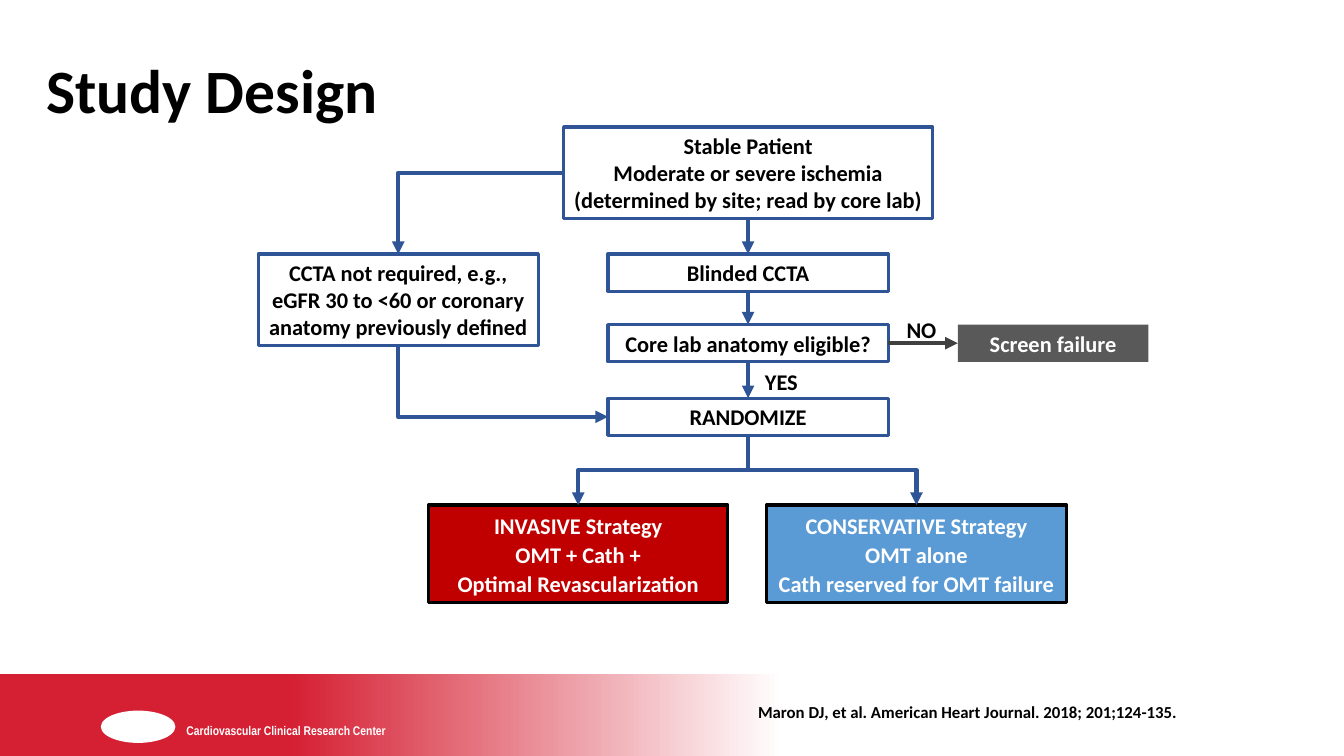
import pptx
import pptx.util
import pptx.dml.color
import pptx.enum.shapes
import pptx.enum.text
import pptx.oxml
import pptx.oxml.ns

Inches = pptx.util.Inches
Pt = pptx.util.Pt
RGBColor = pptx.dml.color.RGBColor
MSO_SHAPE = pptx.enum.shapes.MSO_SHAPE
MSO_CONNECTOR = pptx.enum.shapes.MSO_CONNECTOR
PP_ALIGN = pptx.enum.text.PP_ALIGN
MSO_ANCHOR = pptx.enum.text.MSO_ANCHOR

WHITE = RGBColor(0xFF, 0xFF, 0xFF)
BLACK = RGBColor(0x00, 0x00, 0x00)
NAVY = RGBColor(0x2F, 0x55, 0x97)
GREY = RGBColor(0x59, 0x59, 0x59)
DARK_GREY = RGBColor(0x40, 0x40, 0x40)
BANNER_RED = RGBColor(0xD5, 0x1F, 0x32)
INVASIVE_RED = RGBColor(0xC0, 0x00, 0x00)
CONSERVATIVE_BLUE = RGBColor(0x5B, 0x9B, 0xD5)

TOP, LEFT, BOTTOM, RIGHT = range(4)

deck = pptx.Presentation()
deck.slide_width = Inches(13.33)
deck.slide_height = Inches(7.5)
slide = deck.slides.add_slide(deck.slide_layouts[6])


def write(holder, wording, color=BLACK, size=16, align=PP_ALIGN.CENTER,
          anchor=MSO_ANCHOR.MIDDLE, spacing=1.0, font="Calibri"):
    frame = holder.text_frame
    frame.word_wrap = True
    frame.vertical_anchor = anchor
    frame.text = wording
    font_format = {"name": font, "size": Pt(size), "bold": True}
    for paragraph in frame.paragraphs:
        paragraph.alignment = align
        paragraph.line_spacing = spacing
        for name, value in font_format.items():
            setattr(paragraph.font, name, value)
        paragraph.font.color.rgb = color


def add_block(area, fill=WHITE, outline=None, preset=MSO_SHAPE.RECTANGLE):
    block = slide.shapes.add_shape(preset, *map(Inches, area))
    block.shadow.inherit = False
    block.fill.solid()
    block.fill.fore_color.rgb = fill
    if outline is None:
        block.line.fill.background()
    else:
        block.line.color.rgb = outline
        block.line.width = Pt(2.25)
    return block


banner = add_block((-0.01, 6.69, 7.78, 0.81))
banner.fill.gradient()
banner.fill.gradient_angle = 180
for stop, (position, color) in zip(banner.fill.gradient_stops,
                                   [(0, WHITE), (0.63, BANNER_RED)]):
    stop.position = position
    stop.color.rgb = color

emblem = add_block((1, 7.05, 0.74, 0.32), preset=MSO_SHAPE.OVAL)

steps = {}
for key, area, wording, fill, outline, color, spacing in [
    ("patient", (5.59, 1.26, 3.66, 0.91),
     "Stable Patient\nModerate or severe ischemia\n(determined by site; read by core lab)",
     WHITE, NAVY, BLACK, 1.0),
    ("no_ccta", (2.56, 2.52, 2.78, 0.91),
     "CCTA not required, e.g., eGFR 30 to <60 or coronary anatomy previously defined",
     WHITE, NAVY, BLACK, 1.0),
    ("ccta", (6.03, 2.52, 2.78, 0.37), "Blinded CCTA", WHITE, NAVY, BLACK, 1.0),
    ("eligible", (6.03, 3.22, 2.78, 0.37), "Core lab anatomy eligible?",
     WHITE, NAVY, BLACK, 1.0),
    ("randomize", (6.03, 3.95, 2.78, 0.37), "RANDOMIZE", WHITE, NAVY, BLACK, 1.0),
    ("failure", (9.5, 3.22, 1.89, 0.37), "Screen failure", GREY, None, WHITE, 1.0),
    ("invasive", (4.25, 5.01, 2.97, 0.97),
     "INVASIVE Strategy\nOMT + Cath +\vOptimal Revascularization",
     INVASIVE_RED, BLACK, WHITE, 1.07),
    ("conservative", (7.6, 5.01, 2.98, 0.97),
     "CONSERVATIVE Strategy\vOMT alone\vCath reserved for OMT failure",
     CONSERVATIVE_BLUE, BLACK, WHITE, 1.07),
]:
    steps[key] = add_block(area, fill, outline)
    write(steps[key], wording, color, spacing=spacing)

for start, start_side, end, end_side, color, bend in [
    ("patient", LEFT, "no_ccta", TOP, NAVY, ("bentConnector2", 180, 0, 1)),
    ("no_ccta", BOTTOM, "randomize", LEFT, NAVY, ("bentConnector2", 270, 1, 0)),
    ("randomize", BOTTOM, "invasive", TOP, NAVY, ("bentConnector3", 90, 0, 0)),
    ("randomize", BOTTOM, "conservative", TOP, NAVY, ("bentConnector3", 270, 1, 0)),
    ("eligible", RIGHT, "failure", LEFT, DARK_GREY, None),
    ("eligible", BOTTOM, "randomize", TOP, NAVY, None),
    ("patient", BOTTOM, "ccta", TOP, NAVY, None),
    ("ccta", BOTTOM, "eligible", TOP, NAVY, None),
]:
    kind = MSO_CONNECTOR.ELBOW if bend else MSO_CONNECTOR.STRAIGHT
    arrow = slide.shapes.add_connector(kind, 0, 0, 0, 0)
    arrow.begin_connect(steps[start], start_side)
    arrow.end_connect(steps[end], end_side)
    arrow.line.color.rgb = color
    arrow.line.width = Pt(3)
    properties = arrow.line._get_or_add_ln().getparent()
    head = pptx.oxml.parse_xml(
        '<a:tailEnd %s type="triangle"/>' % pptx.oxml.ns.nsdecls("a"))
    arrow.line._get_or_add_ln().append(head)
    properties.append(
        pptx.oxml.parse_xml("<a:effectLst %s/>" % pptx.oxml.ns.nsdecls("a")))
    if bend:
        preset, angle, flip_h, flip_v = bend
        properties.find(pptx.oxml.ns.qn("a:prstGeom")).set("prst", preset)
        turn = properties.find(pptx.oxml.ns.qn("a:xfrm"))
        for name, value in {"rot": angle * 60000, "flipH": flip_h,
                            "flipV": flip_v}.items():
            turn.set(name, str(value))
        if angle != 180:
            across, down = arrow.width, arrow.height
            arrow.left += (across - down) // 2
            arrow.top += (down - across) // 2
            arrow.width, arrow.height = down, across

for area, wording, text_format in [
    ((0.36, 0.4, 12.41, 1.05), "Study Design",
     {"size": 44, "align": PP_ALIGN.LEFT, "spacing": 0.9}),
    ((8.81, 3.08, 0.66, 0.37), "NO", {}),
    ((7.42, 3.6, 0.66, 0.37), "YES", {}),
    ((7.42, 6.91, 4.57, 0.3),
     "Maron DJ, et al. American Heart Journal. 2018; 201;124-135.",
     {"size": 12, "align": PP_ALIGN.LEFT}),
    ((1.75, 7.12, 2.39, 0.15), "Cardiovascular Clinical Research Center",
     {"size": 9, "align": PP_ALIGN.LEFT, "color": WHITE,
      "anchor": MSO_ANCHOR.TOP, "font": "Arial Narrow"}),
]:
    write(slide.shapes.add_textbox(*map(Inches, area)), wording, **text_format)

deck.save("out.pptx")
